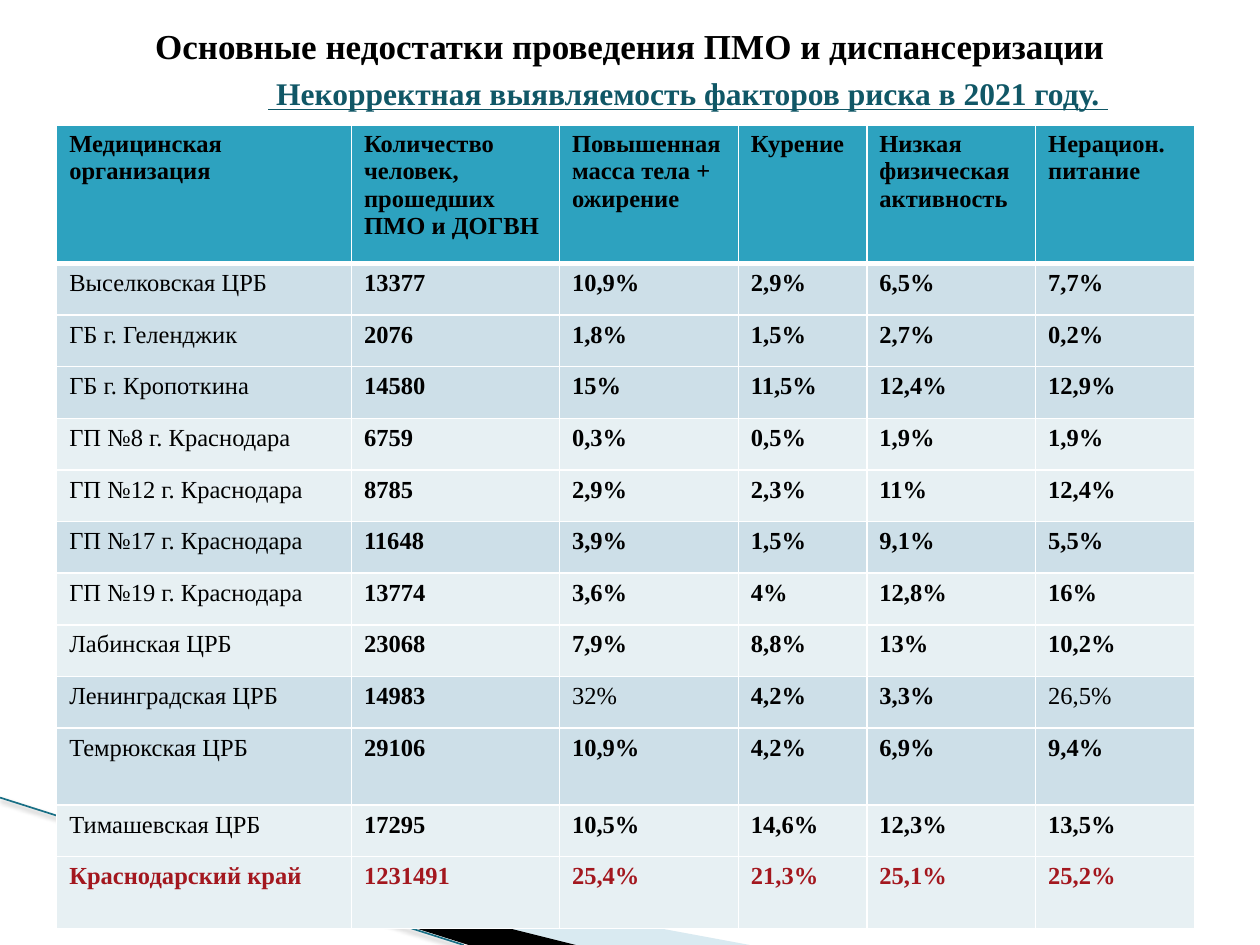
from lxml import etree
from pptx import Presentation
from pptx.dml.color import RGBColor
from pptx.enum.shapes import MSO_CONNECTOR
from pptx.enum.text import MSO_ANCHOR, MSO_AUTO_SIZE, PP_ALIGN
from pptx.oxml.ns import qn
from pptx.util import Inches, Pt

STRAIGHT = MSO_CONNECTOR.STRAIGHT
TOP, MIDDLE = MSO_ANCHOR.TOP, MSO_ANCHOR.MIDDLE
CENTER, JUSTIFY = PP_ALIGN.CENTER, PP_ALIGN.JUSTIFY
NO_AUTOFIT = MSO_AUTO_SIZE.NONE

FONT = "Times New Roman"
BLACK, WHITE, RED = "000000", "FFFFFF", "A3171E"
HEADER, DARK, LIGHT = "2DA2BF", "CDDFE8", "E7F0F3"

TITLE = "Основные недостатки проведения ПМО и диспансеризации"
SUBTITLE = " Некорректная выявляемость факторов риска в 2021 году. "
HEADINGS = [
    "Медицинская организация",
    "Количество человек, прошедших ПМО и ДОГВН",
    "Повышенная масса тела + ожирение",
    "Курение",
    "Низкая\nфизическая активность",
    "Нерацион.\nпитание",
]
CLINICS = [
    (DARK, "Выселковская ЦРБ", "13377", "10,9%", "2,9%", "6,5%", "7,7%"),
    (DARK, "ГБ г. Геленджик", "2076", "1,8%", "1,5%", "2,7%", "0,2%"),
    (DARK, "ГБ г. Кропоткина", "14580", "15%", "11,5%", "12,4%", "12,9%"),
    (LIGHT, "ГП №8 г. Краснодара", "6759", "0,3%", "0,5%", "1,9%", "1,9%"),
    (LIGHT, "ГП №12 г. Краснодара", "8785", "2,9%", "2,3%", "11%", "12,4%"),
    (DARK, "ГП №17 г. Краснодара", "11648", "3,9%", "1,5%", "9,1%", "5,5%"),
    (LIGHT, "ГП №19 г. Краснодара", "13774", "3,6%", "4%", "12,8%", "16%"),
    (LIGHT, "Лабинская ЦРБ", "23068", "7,9%", "8,8%", "13%", "10,2%"),
    (DARK, "Ленинградская ЦРБ", "14983", "32%", "4,2%", "3,3%", "26,5%"),
    (DARK, "Темрюкская ЦРБ", "29106", "10,9%", "4,2%", "6,9%", "9,4%"),
    (LIGHT, "Тимашевская ЦРБ", "17295", "10,5%", "14,6%", "12,3%", "13,5%"),
]
REGION = (LIGHT, "Краснодарский край", "1231491", "25,4%", "21,3%", "25,1%", "25,2%")
REGULAR_VALUES = {"32%", "26,5%"}
COLUMN_WIDTHS = [2.34, 1.65, 1.42, 1.02, 1.34, 1.26]
ROW_HEIGHTS = [1.1] + [0.41] * 9 + [0.61, 0.41, 0.57]
WEDGES = [
    ("A0CBDC", 40, [(0.55, 6.5), (5.95, 7.5), (4.56, 7.5)]),
    (BLACK, 100, [(0.53, 6.49), (4.57, 7.5), (3.72, 7.5)]),
]


def rgb(value):
    return RGBColor.from_string(value)


def add_node(parent, tag, **attributes):
    return etree.SubElement(parent, qn(tag), {k: str(v) for k, v in attributes.items()})


def format_runs(frame, size, color, bold):
    for paragraph in frame.paragraphs:
        for run in paragraph.runs:
            font = run.font
            font.name, font.size, font.bold = FONT, Pt(size), bold
            font.color.rgb = rgb(color)


def place_text(holder, text, box, size, color, align, anchor):
    holder.left, holder.top, holder.width, holder.height = map(Inches, box)
    frame = holder.text_frame
    frame.text = text
    frame.word_wrap = True
    frame.auto_size = NO_AUTOFIT
    frame.vertical_anchor = anchor
    paragraph = frame.paragraphs[0]
    paragraph.alignment = align
    paragraph.space_before = Pt(0)
    format_runs(frame, size, color, True)
    return paragraph


def add_wedge(slide, color, opacity, points):
    corners = [(Inches(x), Inches(y)) for x, y in points]
    builder = slide.shapes.build_freeform(*corners[0])
    builder.add_line_segments(corners[1:], close=True)
    wedge = builder.convert_to_shape()
    wedge.shadow.inherit = False
    wedge.line.fill.background()
    wedge.fill.solid()
    wedge.fill.fore_color.rgb = rgb(color)
    if opacity < 100:
        shade = next(wedge.element.spPr.iter(qn("a:srgbClr")))
        add_node(shade, "a:alpha", val=opacity * 1000)


def add_slope(slide):
    slope = slide.shapes.add_connector(
        STRAIGHT, Inches(0), Inches(6.33), Inches(3.68), Inches(7.5))
    slope.line.color.rgb = rgb("196F85")
    slope.line.width = Pt(0.95)
    effects = add_node(slope.element.spPr, "a:effectLst")
    shadow = add_node(effects, "a:outerShdw", blurRad=Pt(3.1), dist=Pt(1.6), dir=90 * 60000)
    add_node(add_node(shadow, "a:srgbClr", val=BLACK), "a:alpha", val=38000)


def style_cell(cell, text, fill, color, bold, widths):
    cell.text = text
    format_runs(cell.text_frame, 14, color, bold)
    properties = cell._tc.get_or_add_tcPr()
    for side, width in zip("LRTB", widths):
        border = add_node(properties, "a:ln" + side, w=Pt(width))
        add_node(add_node(border, "a:solidFill"), "a:srgbClr", val=WHITE)
    cell.fill.solid()
    cell.fill.fore_color.rgb = rgb(fill)


def add_clinic_table(slide):
    rows = [(HEADER, *HEADINGS), *CLINICS, REGION]
    table = slide.shapes.add_table(
        len(rows), len(HEADINGS), Inches(0.45), Inches(0.99),
        Inches(sum(COLUMN_WIDTHS)), Inches(sum(ROW_HEIGHTS))).table
    for column, width in zip(table.columns, COLUMN_WIDTHS):
        column.width = Inches(width)
    for r, (fill, *texts) in enumerate(rows):
        table.rows[r].height = Inches(ROW_HEIGHTS[r])
        is_clinic = 0 < r < len(rows) - 1
        color = RED if rows[r] is REGION else BLACK
        widths = (0.96, 0.96, 3 if r == 1 else 0.96, 3 if r == 0 else 0.96)
        for c, text in enumerate(texts):
            bold = not (is_clinic and (c == 0 or text in REGULAR_VALUES))
            style_cell(table.cell(r, c), text, fill, color, bold, widths)


def main():
    presentation = Presentation()
    presentation.slide_width, presentation.slide_height = Inches(10), Inches(7.5)
    slide = presentation.slides.add_slide(presentation.slide_layouts[1])
    title, subtitle = slide.placeholders

    place_text(title, TITLE, (0.5, 0.05, 9, 0.63), 20, BLACK, CENTER, MIDDLE)
    line = place_text(subtitle, SUBTITLE, (0.91, 0.54, 8.27, 0.45), 18, "105766", JUSTIFY, TOP)
    properties = line._p.get_or_add_pPr()
    properties.set("marL", str(Inches(1.12)))
    properties.set("indent", "0")
    add_node(properties, "a:buNone")
    line.runs[0].font.underline = True

    for wedge in WEDGES:
        add_wedge(slide, *wedge)
    add_slope(slide)
    add_clinic_table(slide)
    presentation.save("out.pptx")


if __name__ == "__main__":
    main()
